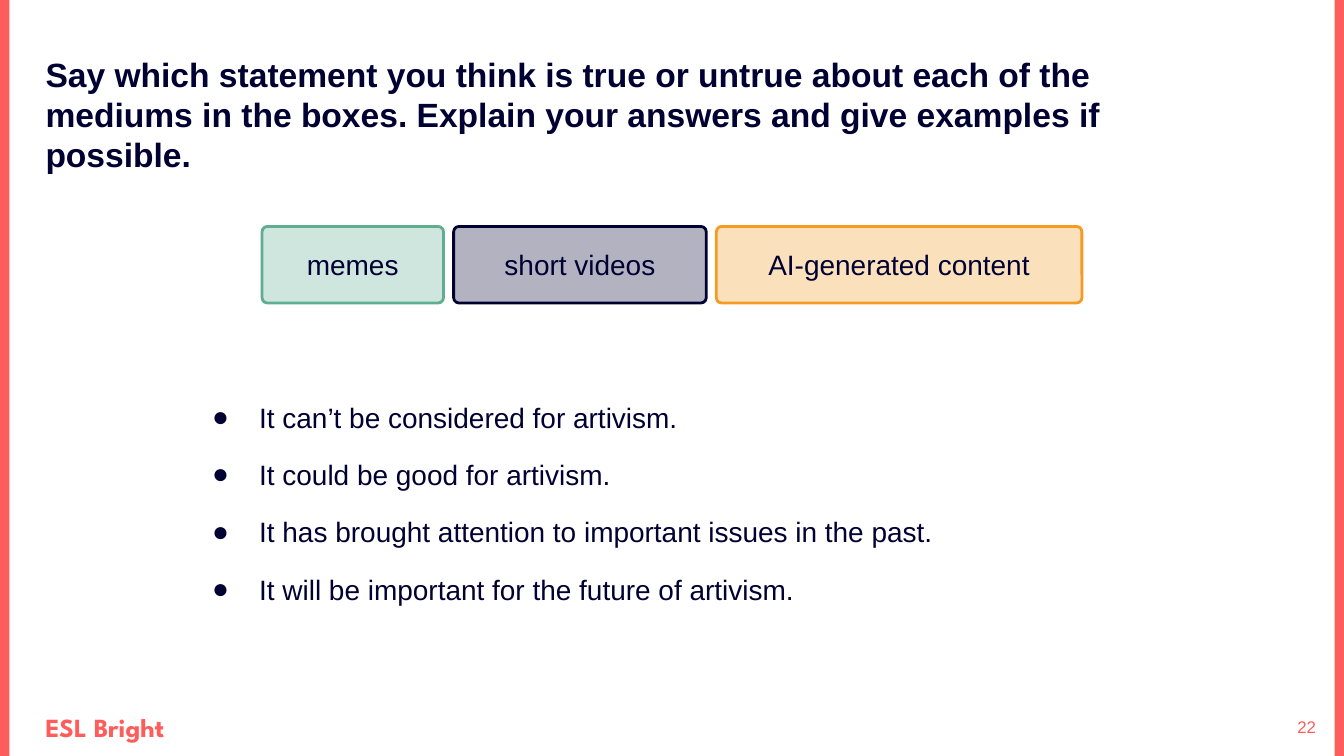
from dataclasses import dataclass

from lxml import etree
from pptx import Presentation
from pptx import util as u
from pptx.dml.color import RGBColor
from pptx.enum import shapes, text
from pptx.oxml.ns import qn

PX = 4572  # EMU per px, 200 px to the inch
WIDE, HIGH = 2000, 1125
CORAL = RGBColor(0xFF, 0x5C, 0x5C)
NAVY = RGBColor(0x00, 0x00, 0x32)
GREEN = RGBColor(0x60, 0xAE, 0x92)
AMBER = RGBColor(0xF5, 0x9A, 0x23)
LEFT, MID, RIGHT = text.PP_ALIGN.LEFT, text.PP_ALIGN.CENTER, text.PP_ALIGN.RIGHT
TOP, CENTER = text.MSO_ANCHOR.TOP, text.MSO_ANCHOR.MIDDLE


@dataclass(frozen=True)
class Style:
    size: int
    color: RGBColor = NAVY
    bold: bool = False
    font: str = "Arial"
    align: text.PP_ALIGN = LEFT
    anchor: text.MSO_ANCHOR = TOP


@dataclass(frozen=True)
class Label:
    words: str
    area: tuple[int, int, int, int]
    style: Style


@dataclass(frozen=True)
class Medium:
    name: str
    width: int
    color: RGBColor


LABELS = [
    Label("ESL Bright", (48, 1038, 224, 87), Style(14, CORAL, True, "League Spartan")),
    Label("22", (1860, 1038, 118, 86), Style(9, CORAL, align=RIGHT, anchor=CENTER)),
    Label("Say which statement you think is true or untrue about each of the "
          "mediums in the boxes. Explain your answers and give examples if possible.",
          (48, 60, 1696, 160), Style(18, bold=True)),
]
MEDIUMS = [
    Medium("memes", 270, GREEN),
    Medium("short videos", 376, NAVY),
    Medium("AI-generated content", 544, AMBER),
]
CLAIMS = [
    "It can’t be considered for artivism.",
    "It could be good for artivism.",
    "It has brought attention to important issues in the past.",
    "It will be important for the future of artivism.",
]
BODY = Style(15)
BOX = Style(15, align=MID, anchor=CENTER)


def emu(*px: int) -> list[u.Emu]:
    return [u.Emu(n * PX) for n in px]


def write(shape, lines: list[str], style: Style) -> None:
    frame = shape.text_frame
    inset = u.Emu(20 * PX)
    form = {"word_wrap": True, "vertical_anchor": style.anchor,
            "margin_left": inset, "margin_right": inset,
            "margin_top": inset, "margin_bottom": inset}
    for key, value in form.items():
        setattr(frame, key, value)
    face = {"name": style.font, "size": u.Pt(style.size), "bold": style.bold}
    for i, line in enumerate(lines):
        para = frame.add_paragraph() if i else frame.paragraphs[0]
        para.alignment = style.align
        run = para.add_run()
        run.text = line
        for key, value in face.items():
            setattr(run.font, key, value)
        run.font.color.rgb = style.color


def label(slide, item: Label) -> None:
    write(slide.shapes.add_textbox(*emu(*item.area)), [item.words], item.style)


def block(slide, kind: shapes.MSO_SHAPE, area: tuple[int, int, int, int], color: RGBColor):
    shape = slide.shapes.add_shape(kind, *emu(*area))
    shape.shadow.inherit = False
    shape.fill.solid()
    shape.fill.fore_color.rgb = color
    shape.line.fill.background()
    return shape


def fade(shape, percent: int) -> None:
    """Make the fill see-through, keeping percent of its strength."""
    color = shape.fill._xPr.find(qn("a:solidFill"))[0]
    etree.SubElement(color, qn("a:alpha")).set("val", str(percent * 1000))


def card(slide, left: int, item: Medium) -> None:
    shape = block(slide, shapes.MSO_SHAPE.ROUNDED_RECTANGLE,
                  (left, 337, item.width, 114), item.color)
    shape.adjustments[0] = 0.07
    fade(shape, 30)
    shape.line.color.rgb = item.color
    shape.line.width = u.Pt(1.5)
    write(shape, [item.name], BOX)


def bullet(para) -> None:
    props = para._p.get_or_add_pPr()
    props.set("marL", str(100 * PX))
    props.set("indent", str(-70 * PX))
    tint = etree.SubElement(props, qn("a:buClr"))
    etree.SubElement(tint, qn("a:srgbClr")).set("val", str(NAVY))
    etree.SubElement(props, qn("a:buFont")).set("typeface", BODY.font)
    etree.SubElement(props, qn("a:buChar")).set("char", "●")


def claims(slide) -> None:
    shape = slide.shapes.add_textbox(*emu(266, 568, 1478, 350))
    write(shape, CLAIMS, BODY)
    paras = shape.text_frame.paragraphs
    for i, para in enumerate(paras):
        para.line_spacing = 1.15
        para.space_before = u.Pt(10 if i else 0)
        para.space_after = u.Pt(10 if i == len(paras) - 1 else 0)
        bullet(para)


def main() -> None:
    deck = Presentation()
    deck.slide_width, deck.slide_height = emu(WIDE, HIGH)
    slide = deck.slides.add_slide(deck.slide_layouts[6])
    edge = 14
    for left in (0, WIDE - edge):
        block(slide, shapes.MSO_SHAPE.RECTANGLE, (left, 0, edge, HIGH), CORAL)
    for item in LABELS:
        label(slide, item)
    claims(slide)
    left, gap = 390, 15
    for item in MEDIUMS:
        card(slide, left, item)
        left += item.width + gap
    deck.save("out.pptx")


if __name__ == "__main__":
    main()
